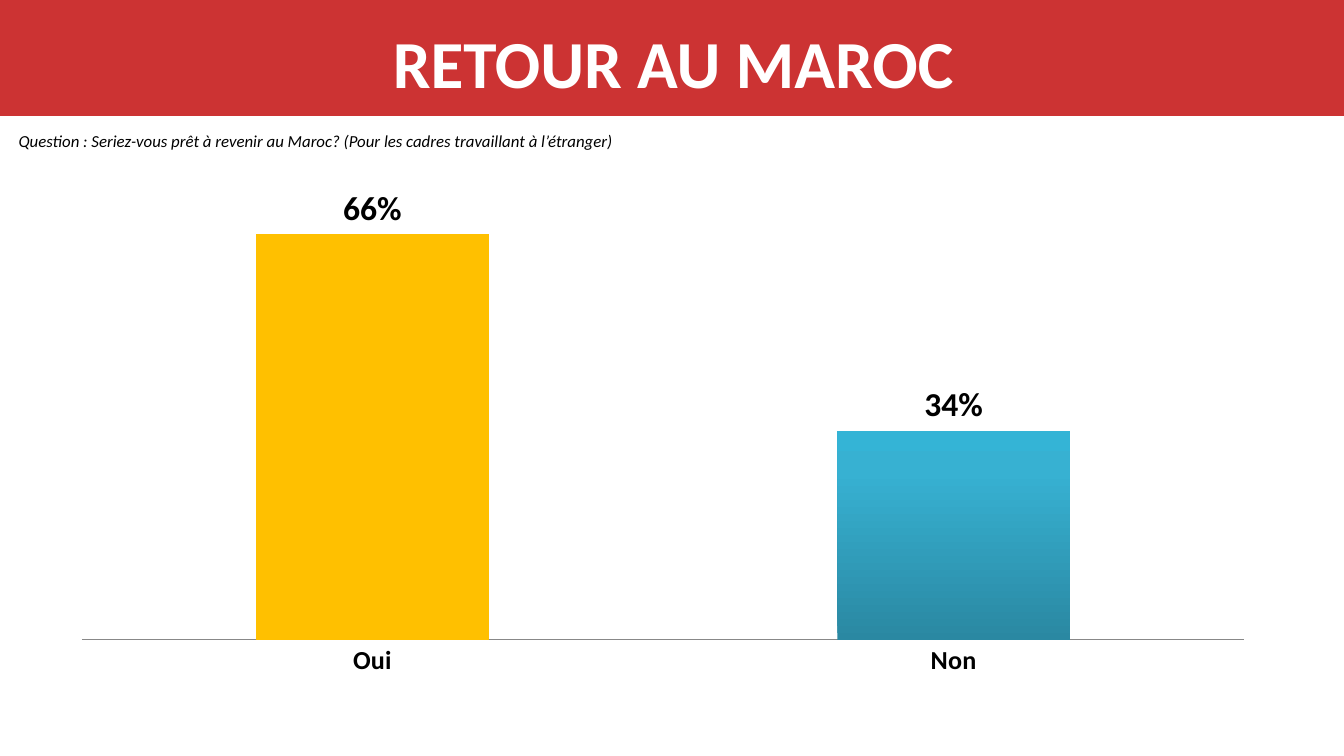
from copy import deepcopy

from lxml.etree import fromstring
from pptx import Presentation
from pptx.chart.data import CategoryChartData
from pptx.dml.color import RGBColor
from pptx.enum.chart import XL_CHART_TYPE as ChartType
from pptx.enum.chart import XL_LABEL_POSITION as LabelPos
from pptx.enum.chart import XL_TICK_MARK as Tick
from pptx.enum.shapes import MSO_SHAPE as Preset
from pptx.enum.text import MSO_ANCHOR as Anchor
from pptx.enum.text import PP_ALIGN as Align
from pptx.util import Inches, Pt

# Content
TITLE = "RETOUR AU MAROC"
QUESTION = ("Question : Seriez-vous prêt à revenir au Maroc? "
            "(Pour les cadres travaillant à l’étranger)")
ANSWERS = {"Oui": 0.66, "Non": 0.34}

# Style
RED = RGBColor(0xCC, 0x33, 0x33)
WHITE = RGBColor(0xFF, 0xFF, 0xFF)
BLACK = RGBColor(0, 0, 0)
GREY = RGBColor(0x88, 0x88, 0x88)
AMBER = RGBColor(0xFF, 0xC0, 0x00)
BLUES = [(0, RGBColor(0x2A, 0x88, 0xA2)),
         (0.8, RGBColor(0x37, 0xB1, 0xD2)),
         (1, RGBColor(0x34, 0xB4, 0xD6))]
FORMATS = {
    "title": dict(size=Pt(36), bold=True),
    "question": dict(size=Pt(9), italic=True),
    "chart": dict(size=Pt(18)),
    "labels": dict(size=Pt(18), bold=True),
    "answers": dict(size=Pt(14), bold=True),
}

# A 16:9 slide; boxes in percent of it: left, top, width, height
WIDTH = Inches(10)
HEIGHT = WIDTH * 9 // 16
BANNER = (0, 0, 100, 15.35)
TITLE_BOX = (5.1, -0.2, 90, 16.7)
QUESTION_BOX = (0.4, 16.35, 67.7, 4.4)
CHART_BOX = (4.3, 24.9, 90, 66)
PLOT = dict(x=2, y=3.4, w=96.1, h=87)  # percent of the chart


def place(box):
    return [round(share * side / 100) for share, side in zip(box, (WIDTH, HEIGHT) * 2)]


def style(font, part, color=BLACK):
    font.name = "Calibri"
    font.color.rgb = color
    for key, value in FORMATS[part].items():
        setattr(font, key, value)


prs = Presentation()
prs.slide_width, prs.slide_height = WIDTH, HEIGHT
slide = prs.slides.add_slide(prs.slide_layouts[5])
shapes = slide.shapes

# Banner, kept behind the title
banner = shapes.add_shape(Preset.RECTANGLE, *place(BANNER))
banner.shadow.inherit = False
banner.fill.solid()
banner.fill.fore_color.rgb = RED
banner.line.fill.background()
title = shapes.title
title._element.addprevious(banner._element)

# Title
title.left, title.top, title.width, title.height = place(TITLE_BOX)
title.text_frame.text = TITLE
title.text_frame.vertical_anchor = Anchor.MIDDLE
heading = title.text_frame.paragraphs[0]
heading.alignment = Align.CENTER
style(heading.runs[0].font, "title", WHITE)

# Question
question = shapes.add_textbox(*place(QUESTION_BOX)).text_frame
question.word_wrap = True
question.text = QUESTION
style(question.paragraphs[0].runs[0].font, "question")

# Chart
answers = CategoryChartData(number_format="0%")
answers.categories = list(ANSWERS)
answers.add_series("Series 1", list(ANSWERS.values()))
chart = shapes.add_chart(ChartType.COLUMN_CLUSTERED, *place(CHART_BOX), answers).chart
chart.has_legend = chart.has_title = False
style(chart.font, "chart")

plot = chart.plots[0]
plot.gap_width, plot.overlap = 150, -25
plot.vary_by_categories = False

# Columns: a rising blue gradient, with the first answer in amber
columns = plot.series[0]
fill = columns.format.fill
fill.gradient()
fill.gradient_angle = 90
stop_list = columns._element.xpath("c:spPr/a:gradFill/a:gsLst")[0]
stop_list.append(deepcopy(stop_list[-1]))
for stop, (position, color) in zip(fill.gradient_stops, BLUES):
    stop.position = position
    stop.color.rgb = color
first = columns.points[0].format.fill
first.solid()
first.fore_color.rgb = AMBER

labels = columns.data_labels
labels.show_value = True
labels.number_format, labels.number_format_is_linked = "0%", False
labels.position = LabelPos.OUTSIDE_END
style(labels.font, "labels")

# Axes
axis = chart.category_axis
axis.major_tick_mark = axis.minor_tick_mark = Tick.NONE
axis.format.line.color.rgb = GREY
axis.format.line.width = Pt(0.75)
style(axis.tick_labels.font, "answers")
scale = chart.value_axis
scale.visible = scale.has_major_gridlines = False
scale.minimum_scale, scale.maximum_scale = 0, 0.7

# Fixed plot area inside the chart
plot_area = chart._chartSpace.chart.plotArea
for auto_layout in plot_area.xpath("c:layout"):
    plot_area.remove(auto_layout)
edges = "".join(f'<c:{key}Mode val="edge"/>' for key in "xy")
sides = "".join(f'<c:{key} val="{share / 100}"/>' for key, share in PLOT.items())
plot_area.insert(0, fromstring(
    '<c:layout xmlns:c="http://schemas.openxmlformats.org/drawingml/2006/chart">'
    f'<c:manualLayout><c:layoutTarget val="inner"/>{edges}{sides}'
    '</c:manualLayout></c:layout>'))

prs.save("out.pptx")
